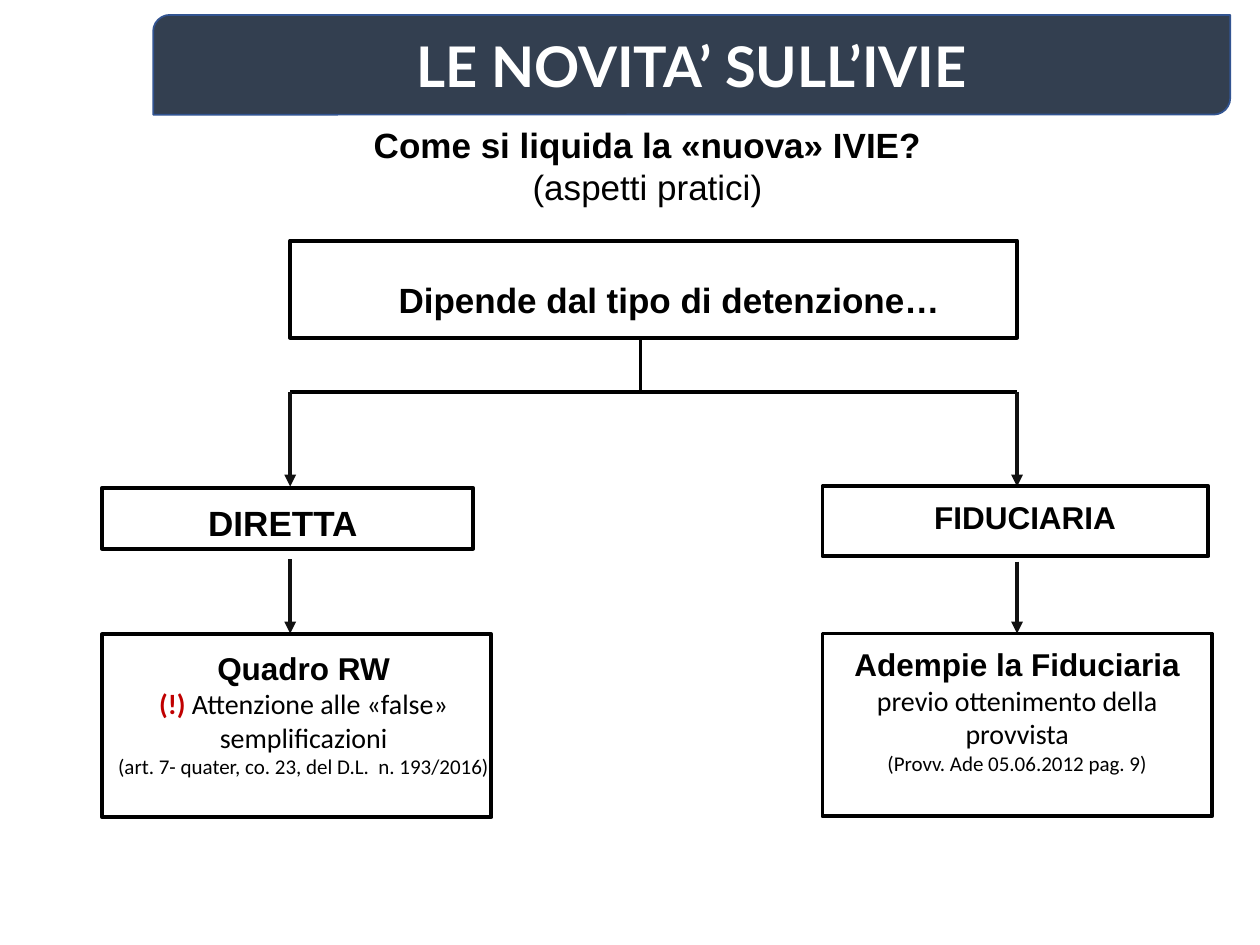
import dataclasses

import pptx
import pptx.dml.color
import pptx.enum.shapes
import pptx.enum.text
import pptx.oxml
import pptx.oxml.ns
import pptx.util

Pt = pptx.util.Pt
SHAPES = pptx.enum.shapes.MSO_SHAPE


@dataclasses.dataclass(frozen=True)
class Style:
    size: float
    font: str
    bold: bool = False
    color: str = "000000"


@dataclasses.dataclass(frozen=True)
class Theme:
    banner_fill: str = "333F50"
    banner_line: str = "325491"
    box_line: str = "000000"
    arrow_line: str = "111111"
    line_width: float = 2.25
    title: Style = Style(32, "Lato", True, "FFFFFF")
    heading: Style = Style(20, "Arial", True)
    subtitle: Style = Style(20, "Arial")
    label: Style = Style(18, "Arial", True)
    warning: Style = Style(16, "Calibri", True, "C00000")
    body: Style = Style(16, "Calibri")
    reference: Style = Style(12, "Calibri")


THEME = Theme()


def rgb(color):
    return pptx.dml.color.RGBColor.from_string(color)


def write(frame, paragraphs):
    frame.word_wrap = True
    for index, pieces in enumerate(paragraphs):
        paragraph = frame.paragraphs[0] if index == 0 else frame.add_paragraph()
        paragraph.alignment = pptx.enum.text.PP_ALIGN.CENTER
        for wording, style in pieces:
            run = paragraph.add_run()
            run.text = wording
            run.font.size = Pt(style.size)
            run.font.name = style.font
            run.font.bold = style.bold
            run.font.color.rgb = rgb(style.color)


def add_text(slide, left, top, width, height, *paragraphs):
    textbox = slide.shapes.add_textbox(Pt(left), Pt(top), Pt(width), Pt(height))
    write(textbox.text_frame, paragraphs)
    textbox.text_frame.auto_size = pptx.enum.text.MSO_AUTO_SIZE.SHAPE_TO_FIT_TEXT


def add_banner(slide, left, top, width, height, title):
    banner = slide.shapes.add_shape(
        SHAPES.ROUND_2_DIAG_RECTANGLE, Pt(left), Pt(top), Pt(width), Pt(height))
    banner.shadow.inherit = False
    banner.fill.solid()
    banner.fill.fore_color.rgb = rgb(THEME.banner_fill)
    banner.line.color.rgb = rgb(THEME.banner_line)
    banner.line.width = Pt(1)
    banner.text_frame.vertical_anchor = pptx.enum.text.MSO_ANCHOR.MIDDLE
    write(banner.text_frame, [[(title, THEME.title)]])


def add_box(slide, left, top, width, height):
    box = slide.shapes.add_shape(
        SHAPES.RECTANGLE, Pt(left), Pt(top), Pt(width), Pt(height))
    box.shadow.inherit = False
    box.fill.background()
    box.line.color.rgb = rgb(THEME.box_line)
    box.line.width = Pt(THEME.line_width)


def add_line(slide, start, end, arrow=False):
    line = slide.shapes.add_connector(
        pptx.enum.shapes.MSO_CONNECTOR.STRAIGHT,
        Pt(start[0]), Pt(start[1]), Pt(end[0]), Pt(end[1]))
    line.line.color.rgb = rgb(THEME.arrow_line if arrow else THEME.box_line)
    line.line.width = Pt(THEME.line_width)
    properties = line._element.spPr
    if arrow:
        head = pptx.oxml.parse_xml(
            f'<a:tailEnd {pptx.oxml.ns.nsdecls("a")} type="triangle"/>')
        line.line._get_or_add_ln().append(head)
    properties.append(
        pptx.oxml.parse_xml(f'<a:effectLst {pptx.oxml.ns.nsdecls("a")}/>'))


def main():
    deck = pptx.Presentation()
    deck.slide_width, deck.slide_height = Pt(720), Pt(540)
    slide = deck.slides.add_slide(deck.slide_layouts[6])

    add_text(slide, 27, 67, 686, 55.5,
             [("Come si liquida la «nuova» IVIE?", THEME.heading)],
             [("(aspetti pratici)", THEME.subtitle)])
    add_banner(slide, 87.5, 8.5, 615.5, 57, "LE NOVITA’ SULL’IVIE")

    direct_x, fiduciary_x, branch_y = 165.8, 581.2, 224
    stem_x = 366

    add_box(slide, direct_x, 137.5, fiduciary_x - direct_x, 55.5)
    add_text(slide, 179.5, 155.5, 406, 55.5,
             [("Dipende dal tipo di detenzione…", THEME.heading)])
    add_line(slide, (stem_x, 193.5), (stem_x, branch_y))
    add_line(slide, (direct_x, branch_y), (fiduciary_x, branch_y))
    for branch_x, lower_start in ((direct_x, 319.5), (fiduciary_x, 321)):
        add_line(slide, (branch_x, branch_y), (branch_x, 278), arrow=True)
        add_line(slide, (branch_x, lower_start), (branch_x, 362), arrow=True)

    add_box(slide, 58.3, 278.8, 212, 34.8)
    add_text(slide, 50.4, 283, 222.5, 31.5, [("DIRETTA", THEME.heading)])
    add_box(slide, 470, 277.8, 220.5, 40)
    add_text(slide, 467.3, 281, 237, 29, [("FIDUCIARIA", THEME.label)])

    add_box(slide, 58.3, 362.5, 222.5, 104.5)
    add_text(slide, 54.7, 367.2, 237.6, 82,
             [("Quadro RW", THEME.label)],
             [("(!)", THEME.warning),
              (" Attenzione alle «false» semplificazioni", THEME.body)],
             [("(art. 7- quater, co. 23, del D.L.  n. 193/2016)", THEME.reference)])
    add_box(slide, 470, 362, 222.5, 104.5)
    add_text(slide, 470, 365.3, 222.5, 82,
             [("Adempie la Fiduciaria ", THEME.label),
              ("previo ottenimento della provvista", THEME.body)],
             [("(Provv. Ade 05.06.2012 pag. 9)", THEME.reference)])

    deck.save("out.pptx")


if __name__ == "__main__":
    main()
